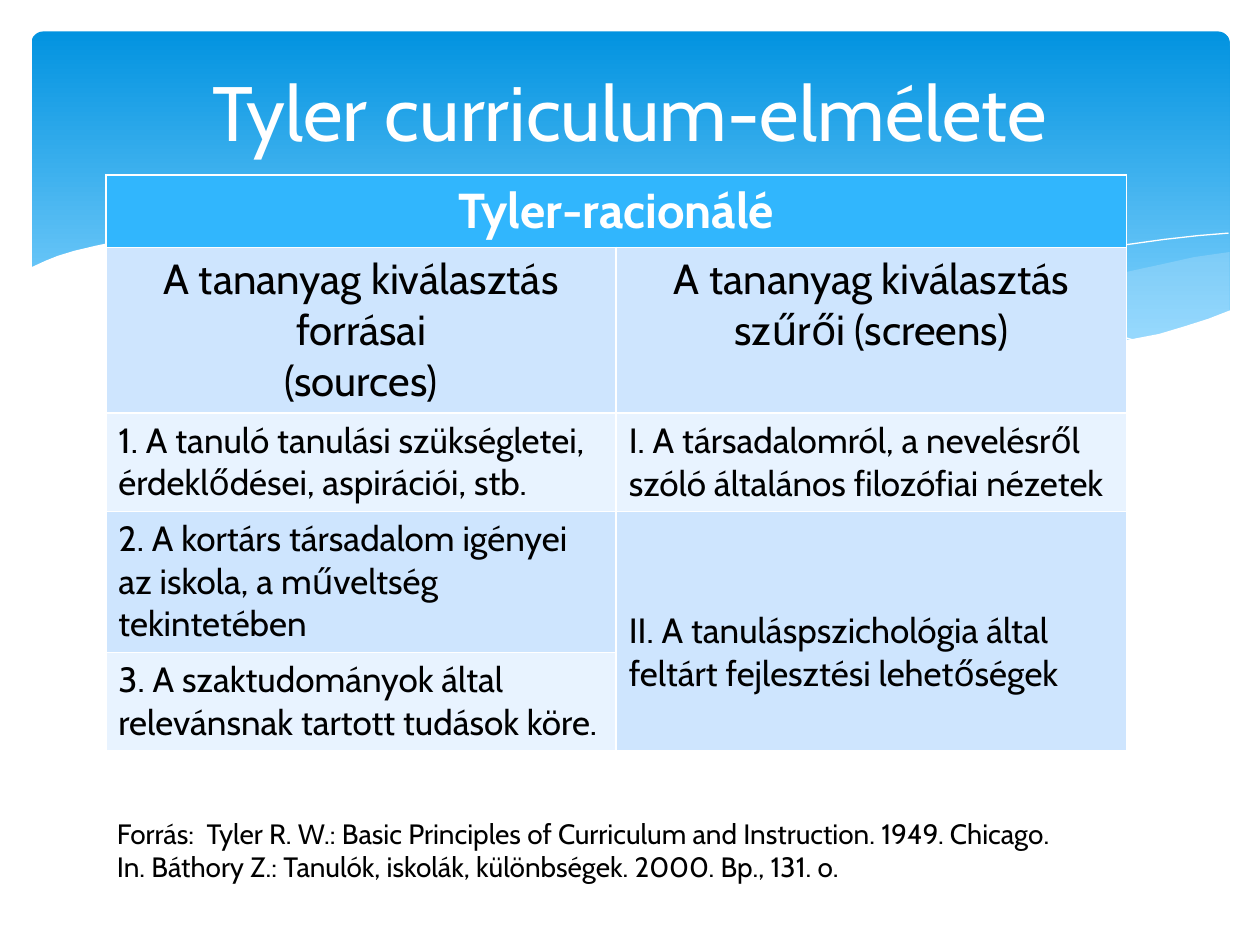
from pptx import Presentation
from pptx.dml.color import RGBColor
from pptx.enum.shapes import MSO_SHAPE
from pptx.enum.text import MSO_ANCHOR, MSO_AUTO_SIZE, PP_ALIGN
from pptx.oxml.ns import qn
from pptx.util import Inches, Pt
from lxml import etree

CENTER, LEFT = PP_ALIGN.CENTER, PP_ALIGN.LEFT
TOP, MIDDLE = MSO_ANCHOR.TOP, MSO_ANCHOR.MIDDLE
ROUND = MSO_SHAPE.ROUNDED_RECTANGLE
FONT = "Cabin"

WHITE = RGBColor(0xFF, 0xFF, 0xFF)
BLACK = RGBColor(0, 0, 0)
DEEP = RGBColor(0x02, 0x93, 0xE0)
SKY = RGBColor(0x83, 0xD3, 0xFE)
MIST = RGBColor(0xC6, 0xE7, 0xFC)
HEAD = RGBColor(0x31, 0xB6, 0xFD)
BAND = RGBColor(0xCE, 0xE5, 0xFE)
PALE = RGBColor(0xE8, 0xF3, 0xFF)

# Wave outlines, in inches
RIGHT_WAVE = [
    (9.76, 2), (9.48, 2.04), (9.21, 2.1), (8.61, 2.23), (8.05, 2.37),
    (7.53, 2.48), (7.06, 2.57), (6.61, 2.65), (6.91, 2.69), (7.32, 2.74),
    (7.69, 2.77), (8.14, 2.78), (8.54, 2.76), (8.89, 2.72), (9.21, 2.65),
    (9.49, 2.57), (9.76, 2.47)]
LONG_WAVE = [
    (8.93, 2.73), (8.37, 2.65), (7.75, 2.54), (7.06, 2.4), (6.29, 2.22),
    (5.69, 2.08), (5.14, 1.98), (4.65, 1.91), (4.2, 1.87), (3.61, 1.85),
    (3.13, 1.88), (2.86, 1.91), (3.42, 1.99), (4.04, 2.11), (4.91, 2.32),
    (5.66, 2.48), (6.34, 2.61), (6.95, 2.7), (7.48, 2.76), (7.96, 2.78),
    (8.48, 2.77)]
LONG_LINE = [
    (3.09, 1.95), (3.44, 1.9), (3.87, 1.87), (4.5, 1.88), (5.1, 1.92),
    (5.82, 2), (6.65, 2.13), (7.27, 2.26), (7.95, 2.41), (8.69, 2.61),
    (9.07, 2.72)]
RIGHT_LINE = [
    (6.13, 2.57), (6.72, 2.41), (7.2, 2.29), (7.76, 2.16), (8.36, 2.04),
    (8.81, 1.96), (9.24, 1.9), (9.51, 1.87), (9.75, 1.85)]
WHITE_WAVE = [
    (9.77, 2.46), (9.59, 2.53), (9.4, 2.59), (9.2, 2.65), (8.99, 2.69),
    (8.75, 2.73), (8.37, 2.76), (8.09, 2.77), (7.61, 2.75), (7.08, 2.7),
    (6.48, 2.62), (5.79, 2.5), (5.03, 2.33), (4.47, 2.2), (3.91, 2.07),
    (3.4, 1.97), (2.92, 1.9), (2.5, 1.86), (2.11, 1.84), (1.77, 1.84),
    (1.46, 1.85), (1.19, 1.87), (0.95, 1.91), (0.76, 1.95), (0.59, 1.99),
    (0.46, 2.03), (0.36, 2.07), (0.23, 2.13), (0.23, 3.29), (9.77, 3.29)]

ROWS = [0.56, 1.31, 0.78, 1.12, 0.78]
# row, column, paragraphs, size, alignment, anchor
CELLS = [
    (0, 0, ["Tyler-racionálé"], 28, CENTER, TOP),
    (1, 0, ["A tananyag kiválasztás forrásai", "(sources)"], 24, CENTER, TOP),
    (1, 1, ["A tananyag kiválasztás szűrői (screens)"], 24, CENTER, TOP),
    (2, 0, ["1. A tanuló tanulási szükségletei, érdeklődései, "
            "aspirációi, stb."], 20, LEFT, TOP),
    (2, 1, ["I. A társadalomról, a nevelésről szóló általános "
            "filozófiai nézetek"], 20, LEFT, MIDDLE),
    (3, 0, ["2. A kortárs társadalom igényei az iskola, a műveltség "
            "tekintetében"], 20, LEFT, TOP),
    (3, 1, ["II. A tanuláspszichológia által feltárt fejlesztési "
            "lehetőségek"], 20, LEFT, MIDDLE),
    (4, 0, ["3. A szaktudományok által relevánsnak tartott tudások "
            "köre."], 20, LEFT, TOP),
]
SOURCE = [
    "Forrás:  Tyler R. W.: Basic Principles of Curriculum and Instruction. "
    "1949. Chicago.",
    "In. Báthory Z.: Tanulók, iskolák, különbségek. 2000. Bp., 131. o."]


def write(frame, lines, size, color, align=LEFT, bold=False):
    frame.word_wrap = True
    for i, line in enumerate(lines):
        para = frame.add_paragraph() if i else frame.paragraphs[0]
        para.text = line
        para.alignment = align
        font = para.font
        font.name, font.size, font.bold = FONT, Pt(size), bold
        font.color.rgb = color


def place(shape, *box):
    shape.left, shape.top, shape.width, shape.height = map(Inches, box)


def add_panel(shapes):
    panel = shapes.add_shape(ROUND, *map(Inches, (0.25, 0.25, 9.51, 2.7)))
    panel.adjustments[0] = 0.034
    panel.shadow.inherit = False
    panel.line.fill.background()
    panel.fill.gradient()
    panel.fill.gradient_angle = 270
    for stop, color, pos in zip(panel.fill.gradient_stops,
                                (DEEP, SKY), (0, 0.9)):
        stop.color.rgb, stop.position = color, pos


def add_path(shapes, points, closed):
    spots = [(Inches(x), Inches(y)) for x, y in points]
    pen = shapes.build_freeform(*spots[0])
    pen.add_line_segments(spots[1:], close=closed)
    shape = pen.convert_to_shape()
    shape.shadow.inherit = False
    return shape


def add_wave(shapes, points, color, alpha=100):
    wave = add_path(shapes, points, True)
    wave.line.fill.background()
    wave.fill.solid()
    wave.fill.fore_color.rgb = color
    if alpha < 100:
        tint = wave._element.spPr.find(".//" + qn("a:srgbClr"))
        etree.SubElement(tint, qn("a:alpha"), val=str(alpha * 1000))


def add_curve(shapes, points):
    curve = add_path(shapes, points, False)
    curve.fill.background()
    curve.line.color.rgb = WHITE
    curve.line.width = Pt(0)


def add_grid(shapes):
    box = map(Inches, (0.84, 1.39, 8.1, sum(ROWS)))
    grid = shapes.add_table(len(ROWS), 2, *box).table
    for r, high in enumerate(ROWS):
        grid.rows[r].height = Inches(high)
        for cell in grid.rows[r].cells:
            cell.fill.solid()
            cell.fill.fore_color.rgb = (
                HEAD if r == 0 else BAND if r % 2 else PALE)
    grid.cell(0, 0).merge(grid.cell(0, 1))
    grid.cell(3, 1).merge(grid.cell(4, 1))
    for r, c, lines, size, align, anchor in CELLS:
        cell = grid.cell(r, c)
        cell.vertical_anchor = anchor
        write(cell.text_frame, lines, size, BLACK if r else WHITE,
              align, r == 0)
    # The tall cell's text sits below its middle
    grid.cell(3, 1).margin_top = Inches(0.39)


def main():
    deck = Presentation()
    deck.slide_width, deck.slide_height = Inches(10), Inches(7.5)
    slide = deck.slides.add_slide(deck.slide_layouts[5])
    shapes = slide.shapes

    # Backdrop
    add_panel(shapes)
    add_wave(shapes, RIGHT_WAVE, MIST, 29)
    add_wave(shapes, LONG_WAVE, MIST, 40)
    add_curve(shapes, LONG_LINE)
    add_curve(shapes, RIGHT_LINE)
    add_wave(shapes, WHITE_WAVE, WHITE)

    # Table
    add_grid(shapes)

    # Title, brought in front of the backdrop
    title = shapes.title
    place(title, 0.5, 0.37, 9, 1.02)
    write(title.text_frame, ["Tyler curriculum-elmélete"], 44, WHITE, CENTER)
    title.text_frame.vertical_anchor = MIDDLE
    title.text_frame.auto_size = MSO_AUTO_SIZE.NONE
    shapes._spTree.append(title._element)

    # Source note
    note = shapes.add_textbox(*map(Inches, (0.83, 6.43, 8.19, 0.64)))
    write(note.text_frame, SOURCE, 16, BLACK)

    deck.save("out.pptx")


if __name__ == "__main__":
    main()
